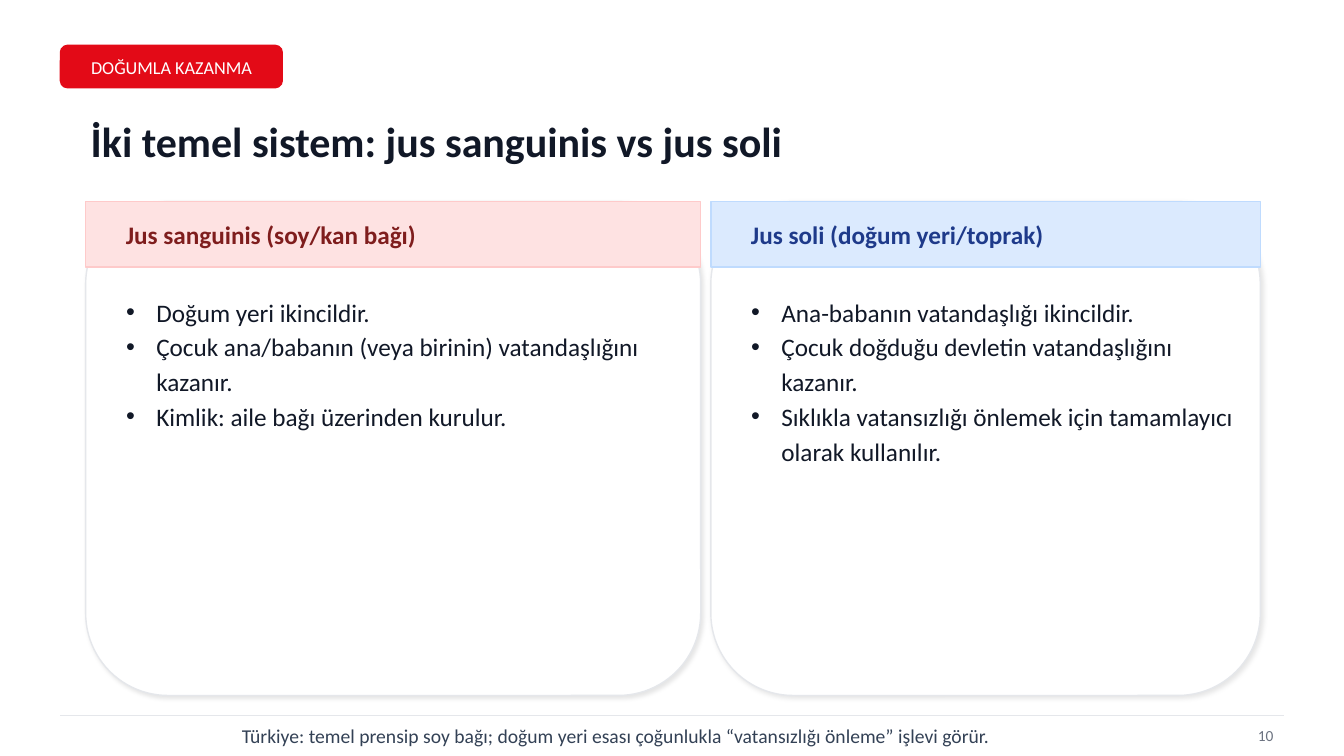
from lxml import etree
from pptx import Presentation
from pptx.dml.color import RGBColor
from pptx.enum import shapes, text
from pptx.oxml import parse_xml
from pptx.oxml.ns import nsdecls, qn
from pptx.util import Inches, Pt

rgb = RGBColor.from_string
prs = Presentation()
prs.slide_width, prs.slide_height = Inches(13.33), Inches(7.5)
s = prs.slides.add_slide(prs.slide_layouts[3])
title, *bodies = s.placeholders


def box(kind, at, fill, line):
    sp = s.shapes.add_shape(kind, *map(Inches, at))
    sp.shadow.inherit = False
    sp.fill.solid()
    sp.fill.fore_color.rgb = rgb(fill)
    sp.line.color.rgb = rgb(line)
    sp.line.width = Pt(1)
    return sp


def write(at, lines, size, color, sp=None, bold=False, align="LEFT", bullet=False):
    sp = sp or s.shapes.add_textbox(0, 0, 0, 0)
    s.shapes._spTree.append(sp._element)
    for name, value in zip(("left", "top", "width", "height"), at):
        setattr(sp, name, Inches(value))
    tf = sp.text_frame
    anchor = text.MSO_ANCHOR.TOP if bullet else text.MSO_ANCHOR.MIDDLE
    frame = {"word_wrap": True, "auto_size": text.MSO_AUTO_SIZE.NONE, "vertical_anchor": anchor}
    for name, value in frame.items():
        setattr(tf, name, value)
    tf.text = "\n".join(lines)
    font = {"name": "Calibri", "size": Pt(size), "bold": bold}
    for p in tf.paragraphs:
        p.alignment = text.PP_ALIGN[align]
        if bullet:
            p.line_spacing = 1.15
            p.space_before = Pt(0)
            pPr = p._p.get_or_add_pPr()
            pPr.set("marL", str(Inches(0.3)))
            pPr.set("indent", str(Inches(-0.3)))
            etree.SubElement(pPr, qn("a:buChar"), char="•")
        for r in p.runs:
            for name, value in font.items():
                setattr(r.font, name, value)
            r.font.color.rgb = rgb(color)


rounded, rect = shapes.MSO_SHAPE.ROUNDED_RECTANGLE, shapes.MSO_SHAPE.RECTANGLE
box(rounded, (0.6, 0.45, 2.2, 0.42), "E30A17", "E30A17")
write((0.6, 0.52, 2.2, 0.3), ["DOĞUMLA KAZANMA"], 13, "FFFFFF", align="CENTER")
write((0.8, 1.1, 11.73, 0.6), ["İki temel sistem: jus sanguinis vs jus soli"], 30, "111827",
      title, bold=True)

cards = [
    (0.85, 6.1, "FEE2E2", "FECACA", "7F1D1D", "Jus sanguinis (soy/kan bağı)",
     ["Doğum yeri ikincildir.",
      "Çocuk ana/babanın (veya birinin) vatandaşlığını kazanır.",
      "Kimlik: aile bağı üzerinden kurulur."]),
    (7.05, 5.45, "DBEAFE", "BFDBFE", "1E3A8A", "Jus soli (doğum yeri/toprak)",
     ["Ana-babanın vatandaşlığı ikincildir.",
      "Çocuk doğduğu devletin vatandaşlığını kazanır.",
      "Sıklıkla vatansızlığı önlemek için tamamlayıcı olarak kullanılır."]),
]
for body, (x, w, fill, line, color, heading, points) in zip(bodies, cards):
    card = box(rounded, (x, 2, w, 4.9), "FFFFFF", "E5E7EB")
    card._element.spPr.find(qn("a:effectLst")).append(parse_xml(
        f'<a:outerShdw {nsdecls("a")} blurRad="{Pt(3)}" dist="{Pt(2)}" dir="2700000" '
        'algn="bl" rotWithShape="0"><a:srgbClr val="000000"><a:alpha val="10000"/>'
        '</a:srgbClr></a:outerShdw>'))
    box(rect, (x, 2, w, 0.65), fill, line)
    write((x + 0.3, 2.18, w - 0.4, 0.3), [heading], 18, color, bold=True)
    write((x + 0.3, 2.85, w - 0.45, 1.65), points, 18, "111827", body, bullet=True)

write((2.3, 7.15, 11.03, 0.3),
      ["Türkiye: temel prensip soy bağı; doğum yeri esası çoğunlukla “vatansızlığı önleme” işlevi görür."],
      14, "334155")
rule = s.shapes.add_connector(shapes.MSO_CONNECTOR.STRAIGHT,
                              Inches(0.6), Inches(7.1), Inches(12.73), Inches(7.1))
rule.line.color.rgb = rgb("E5E7EB")
rule.line.width = Pt(1)
etree.SubElement(rule._element.spPr, qn("a:effectLst"))
write((12.23, 7.15, 0.5, 0.3), ["10"], 11, "6B7280", align="RIGHT")

prs.save("out.pptx")
